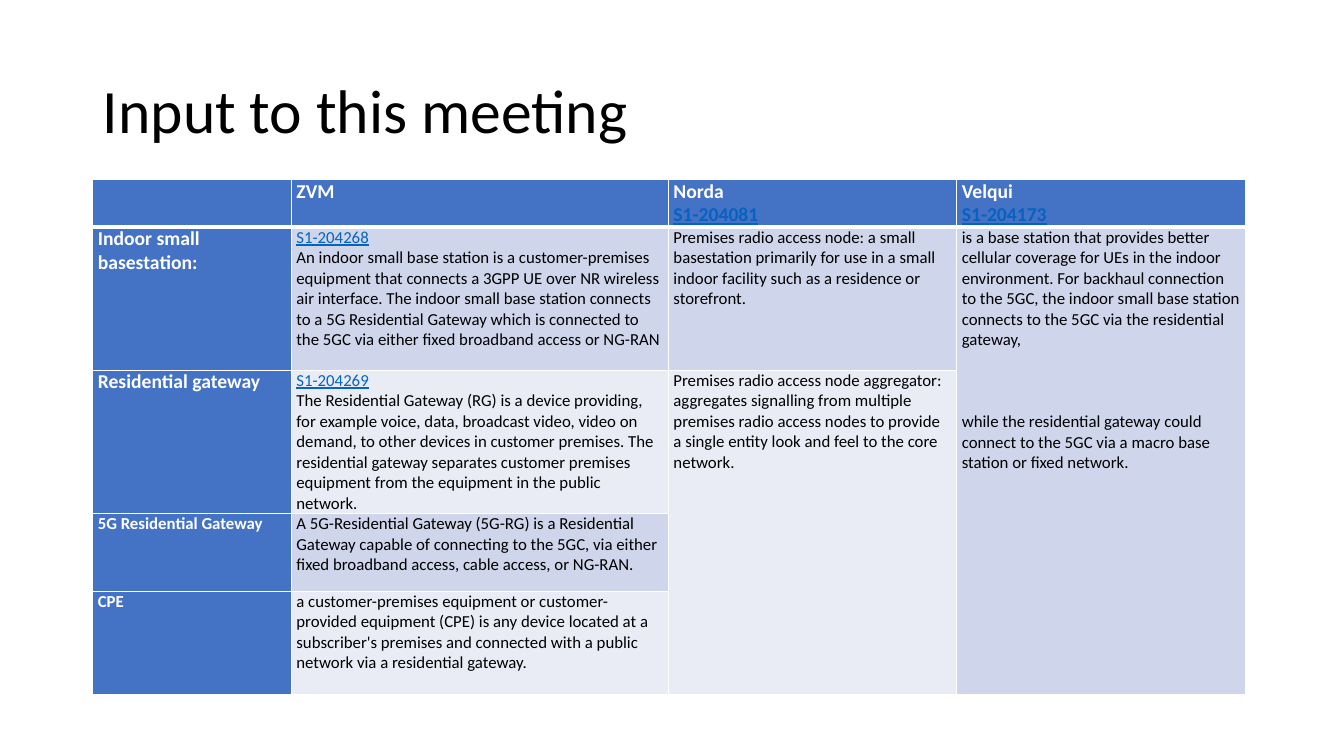
from lxml import etree
from pptx import Presentation
from pptx import util as u
from pptx.dml.color import RGBColor
from pptx.enum import text
from pptx.oxml import ns

BLACK = RGBColor(0x00, 0x00, 0x00)
WHITE = RGBColor(0xFF, 0xFF, 0xFF)
BLUE = RGBColor(0x44, 0x72, 0xC4)
LINK = RGBColor(0x05, 0x63, 0xC1)
BANDS = [RGBColor(0xE9, 0xEB, 0xF5), RGBColor(0xCF, 0xD5, 0xEA)]

COLUMN_WIDTHS = [1.97, 3.74, 2.86, 2.86]
ROW_HEIGHTS = [0.46, 1.42, 1.42, 0.77, 1.03]
LABEL_SIZES = [14, 14, 14, 12, 12]
MERGES = [((1, 3), (4, 3)), ((2, 2), (4, 2))]
LINK_PREFIX = "S1-"
PART_GAP = 44

CONTENT = {
    (0, 1): ["ZVM"],
    (0, 2): ["Norda", "S1-204081"],
    (0, 3): ["Velqui", "S1-204173"],
    (1, 0): ["Indoor small basestation:"],
    (1, 1): [
        "S1-204268",
        "An indoor small base station is a customer-premises equipment that connects a 3GPP UE "
        "over NR wireless air interface. The indoor small base station connects to a 5G Residential "
        "Gateway which is connected to the 5GC via either fixed broadband access or NG-RAN",
    ],
    (1, 2): [
        "Premises radio access node: a small basestation primarily for use in a small indoor "
        "facility such as a residence or storefront.",
    ],
    (1, 3): [
        "is a base station that provides better cellular coverage for UEs in the indoor environment. "
        "For backhaul connection to the 5GC, the indoor small base station connects to the 5GC via "
        "the residential gateway,",
        "while the residential gateway could connect to the 5GC via a macro base station or fixed network.",
    ],
    (2, 0): ["Residential gateway"],
    (2, 1): [
        "S1-204269",
        "The Residential Gateway (RG) is a device providing, for example voice, data, broadcast "
        "video, video on demand, to other devices in customer premises. The residential gateway "
        "separates customer premises equipment from the equipment in the public network.",
    ],
    (2, 2): [
        "Premises radio access node aggregator: aggregates signalling from multiple premises radio "
        "access nodes to provide a single entity look and feel to the core network.",
    ],
    (3, 0): ["5G Residential Gateway"],
    (3, 1): [
        "A 5G-Residential Gateway (5G-RG) is a Residential Gateway capable of connecting to the 5GC, "
        "via either fixed broadband access, cable access, or NG-RAN.",
    ],
    (4, 0): ["CPE"],
    (4, 1): [
        "a customer-premises equipment or customer-provided equipment (CPE) is any device located at "
        "a subscriber's premises and connected with a public network via a residential gateway.",
    ],
}


def write_para(para, words, size=12, color=BLACK, bold=False, underline=False, before=0, spacing=1.0):
    para.alignment = text.PP_ALIGN.LEFT
    para.space_before = u.Pt(before)
    para.line_spacing = spacing
    span = para.add_run()
    span.text = words
    span.font.name = "Calibri"
    span.font.size = u.Pt(size)
    span.font.color.rgb = color
    span.font.bold = bold
    span.font.underline = underline


def add_borders(cell, widths):
    properties = cell._tc.get_or_add_tcPr()
    for index, (side, width) in enumerate(widths.items()):
        line = etree.Element(ns.qn(f"a:ln{side}"), w=str(u.Pt(width)))
        fill = etree.SubElement(line, ns.qn("a:solidFill"))
        etree.SubElement(fill, ns.qn("a:srgbClr"), val=str(WHITE))
        properties.insert(index, line)


def fill_cell(cell, row, column):
    is_label = row == 0 or column == 0
    cell.margin_left = cell.margin_right = u.Inches(0.05)
    cell.margin_top = cell.margin_bottom = 0
    cell.vertical_anchor = text.MSO_ANCHOR.TOP
    cell.fill.solid()
    cell.fill.fore_color.rgb = BLUE if is_label else BANDS[row % 2]
    add_borders(cell, {"L": 1, "R": 1, "T": 3 if row == 1 else 1, "B": 3 if row == 0 else 1})
    frame = cell.text_frame
    previous_is_link = True
    for index, words in enumerate(CONTENT.get((row, column), [])):
        para = frame.add_paragraph() if index else frame.paragraphs[0]
        is_link = words.startswith(LINK_PREFIX)
        write_para(
            para,
            words,
            size=LABEL_SIZES[row] if is_label else 12,
            color=LINK if is_link else WHITE if is_label else BLACK,
            bold=is_label,
            underline=is_link,
            before=0 if is_link or previous_is_link else PART_GAP,
        )
        previous_is_link = is_link


def place_title(page, left, top, width, height):
    title = page.shapes.title
    title.left, title.top = u.Inches(left), u.Inches(top)
    title.width, title.height = u.Inches(width), u.Inches(height)
    frame = title.text_frame
    frame.word_wrap = True
    frame.vertical_anchor = text.MSO_ANCHOR.MIDDLE
    write_para(frame.paragraphs[0], "Input to this meeting", size=44, spacing=0.9)


def place_definitions(page, left, top):
    box = page.shapes.add_table(
        len(ROW_HEIGHTS), len(COLUMN_WIDTHS), u.Inches(left), u.Inches(top),
        u.Inches(sum(COLUMN_WIDTHS)), u.Inches(sum(ROW_HEIGHTS)),
    )
    table = box.table
    for column, width in zip(table.columns, COLUMN_WIDTHS):
        column.width = u.Inches(width)
    for row, height in zip(table.rows, ROW_HEIGHTS):
        row.height = u.Inches(height)
    for first, last in MERGES:
        table.cell(*first).merge(table.cell(*last))
    for row in range(len(ROW_HEIGHTS)):
        for column in range(len(COLUMN_WIDTHS)):
            fill_cell(table.cell(row, column), row, column)


def main():
    deck = Presentation()
    deck.slide_width, deck.slide_height = u.Inches(13.33), u.Inches(7.5)
    page = deck.slides.add_slide(deck.slide_layouts[5])
    place_title(page, 0.92, 0.4, 11.5, 1.45)
    place_definitions(page, 0.92, 1.78)
    deck.save("out.pptx")


if __name__ == "__main__":
    main()
